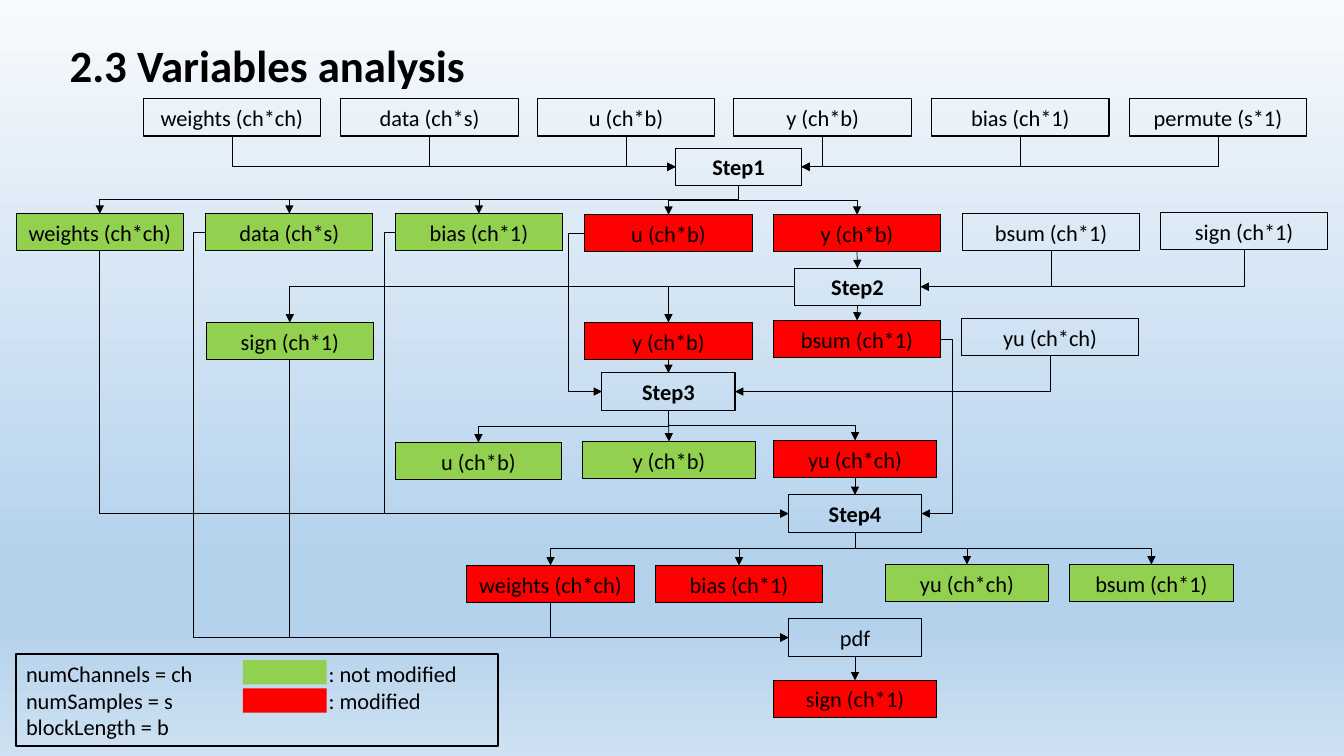
"""Build the variables analysis slide: a data-flow chart over four steps with a legend."""
from copy import deepcopy
from itertools import product

from lxml.etree import SubElement
from pptx import Presentation
from pptx.dml.color import RGBColor
from pptx.enum.shapes import MSO_CONNECTOR, MSO_SHAPE
from pptx.enum.text import MSO_ANCHOR, MSO_AUTO_SIZE, PP_ALIGN
from pptx.oxml.ns import qn
from pptx.util import Pt

PX = 9144
BLACK = RGBColor(0x00, 0x00, 0x00)
GREEN = RGBColor(0x92, 0xD0, 0x50)
RED = RGBColor(0xFF, 0x00, 0x00)
SKY = [
    (0, RGBColor(0xF7, 0xFA, 0xFD)),
    (0.74, RGBColor(0xB5, 0xD2, 0xEC)),
    (0.83, RGBColor(0xB5, 0xD2, 0xEC)),
    (1, RGBColor(0xCE, 0xE1, 0xF2)),
]
TOP, LEFT, BOTTOM, RIGHT = range(4)
DIMENSIONS = {
    "weights": "ch*ch", "data": "ch*s", "u": "ch*b", "y": "ch*b", "bias": "ch*1",
    "permute": "s*1", "bsum": "ch*1", "sign": "ch*1", "yu": "ch*ch",
}

deck = Presentation()
deck.slide_width, deck.slide_height = 1333 * PX, 750 * PX
slide = deck.slides.add_slide(deck.slide_layouts[5])

sky = slide.background.fill
sky.gradient()
sky.gradient_angle = 270
stops = slide._element.find(".//" + qn("a:gsLst"))
while len(stops) < len(SKY):
    stops.append(deepcopy(stops[0]))
for stop, (position, color) in zip(sky.gradient_stops, SKY):
    stop.position = position
    stop.color.rgb = color


def format_font(paragraph, size, bold):
    for key, value in {"name": "Calibri", "size": Pt(size), "bold": bold}.items():
        setattr(paragraph.font, key, value)
    paragraph.font.color.rgb = BLACK


def add_box(x, y, width, height, fill=None, line=0.75, lines=(), bold=False, align=PP_ALIGN.CENTER):
    box = slide.shapes.add_shape(MSO_SHAPE.RECTANGLE, x * PX, y * PX, width * PX, height * PX)
    box.shadow.inherit = False
    if fill is None:
        box.fill.background()
    else:
        box.fill.solid()
        box.fill.fore_color.rgb = fill
    if line:
        box.line.color.rgb = BLACK
        box.line.width = Pt(line)
    else:
        box.line.fill.background()
    if lines:
        frame = box.text_frame
        frame.text = "\n".join(lines)
        frame.word_wrap = True
        frame.auto_size = MSO_AUTO_SIZE.SHAPE_TO_FIT_TEXT
        for paragraph in frame.paragraphs:
            paragraph.alignment = align
            format_font(paragraph, 16, bold)
    return box


heading = slide.shapes.title
for key, value in {"left": 59, "top": 36, "width": 827, "height": 63}.items():
    setattr(heading, key, value * PX)
heading.text_frame.text = "2.3 Variables analysis"
heading.text_frame.vertical_anchor = MSO_ANCHOR.MIDDLE
heading_line = heading.text_frame.paragraphs[0]
heading_line.alignment = PP_ALIGN.LEFT
heading_line.line_spacing = 0.9
format_font(heading_line, 32, True)

variable_rows = [
    ("in1", 98, 176, None,
     {"weights": 142, "data": 338, "u": 533, "y": 728, "bias": 924, "permute": 1120}),
    ("in2", 212, 175, None, {"bsum": 955}),
    ("in2", 211, 166, None, {"sign": 1151}),
    ("in3", 316, 175, None, {"yu": 954}),
    ("out1", 212, 166, GREEN, {"weights": 16, "data": 204, "bias": 392}),
    ("out1", 213, 166, RED, {"u": 580, "y": 767}),
    ("out2", 320, 165, GREEN, {"sign": 205}),
    ("out2", 320, 166, RED, {"y": 580}),
    ("out2", 318, 166, RED, {"bsum": 767}),
    ("out3", 439, 165, GREEN, {"u": 392}),
    ("out3", 438, 171, GREEN, {"y": 578}),
    ("out3", 437, 162, RED, {"yu": 767}),
    ("out4", 561, 166, RED, {"weights": 463, "bias": 650}),
    ("out4", 560, 162, GREEN, {"yu": 878, "bsum": 1061}),
    ("final", 675, 162, RED, {"sign": 767}),
]
steps = [
    ("Step1", 670, 147, 125), ("Step2", 788, 266, 125), ("Step3", 597, 370, 132),
    ("Step4", 782, 491, 132), ("pdf", 782, 614, 132),
]
nodes = {}
for stage, y, width, fill, columns in variable_rows:
    for variable, x in columns.items():
        label = f"{variable} ({DIMENSIONS[variable]})"
        nodes[f"{stage} {variable}"] = add_box(x, y, width, 37, fill, lines=[label])
for step, x, y, width in steps:
    nodes[step] = add_box(x, y, width, 37, lines=[step], bold=step != "pdf")

legend = add_box(
    16, 649, 478, 91, line=1.5, align=PP_ALIGN.LEFT,
    lines=["numChannels = ch\t: not modified", "numSamples = s\t: modified", "blockLength = b"])
for paragraph in legend.text_frame.paragraphs:
    tabs = SubElement(paragraph._p.get_or_add_pPr(), qn("a:tabLst"))
    SubElement(tabs, qn("a:tab"), pos=str(300 * PX), algn="l")

flows = [
    (["in1 weights", "in1 data", "in1 u"], BOTTOM, ["Step1"], LEFT, 0),
    (["in1 y", "in1 bias", "in1 permute"], BOTTOM, ["Step1"], RIGHT, 0),
    (["Step1"], BOTTOM, ["out1 weights", "out1 data", "out1 bias", "out1 u", "out1 y"], TOP, 0),
    (["out1 y"], BOTTOM, ["Step2"], TOP, 0),
    (["in2 bsum", "in2 sign"], BOTTOM, ["Step2"], RIGHT, 0),
    (["Step2"], LEFT, ["out2 sign", "out2 y"], TOP, 0),
    (["Step2"], BOTTOM, ["out2 bsum"], TOP, 0),
    (["out2 y"], BOTTOM, ["Step3"], TOP, 0),
    (["out1 u"], LEFT, ["Step3"], LEFT, 16),
    (["in3 yu"], BOTTOM, ["Step3"], RIGHT, 0),
    (["Step3"], BOTTOM, ["out3 y", "out3 u", "out3 yu"], TOP, 0),
    (["out3 yu"], BOTTOM, ["Step4"], TOP, 0),
    (["out1 weights"], BOTTOM, ["Step4"], LEFT, 0),
    (["out1 bias"], LEFT, ["Step4"], LEFT, 11),
    (["out2 bsum"], RIGHT, ["Step4"], RIGHT, 12),
    (["Step4"], BOTTOM, ["out4 weights", "out4 bias", "out4 yu", "out4 bsum"], TOP, 0),
    (["out4 weights", "out2 sign"], BOTTOM, ["pdf"], LEFT, 0),
    (["out1 data"], LEFT, ["pdf"], LEFT, 12),
    (["pdf"], BOTTOM, ["final sign"], TOP, 0),
]
for sources, exit_side, targets, entry_side, detour in flows:
    for source, target in product(sources, targets):
        arrow = slide.shapes.add_connector(MSO_CONNECTOR.ELBOW, 0, 0, 0, 0)
        arrow.begin_connect(nodes[source], exit_side)
        arrow.end_connect(nodes[target], entry_side)
        run, drop = arrow.end_x - arrow.begin_x, arrow.end_y - arrow.begin_y
        properties = arrow._element.spPr
        geometry = properties.find(qn("a:prstGeom"))
        vertical_exit = exit_side == BOTTOM
        vertical_entry = entry_side == TOP
        if vertical_exit and vertical_entry and abs(run) < 3 * PX:
            geometry.set("prst", "straightConnector1")
        else:
            if vertical_exit != vertical_entry:
                geometry.set("prst", "bentConnector2")
            if vertical_exit:
                middle_x = (arrow.begin_x + arrow.end_x) // 2
                middle_y = (arrow.begin_y + arrow.end_y) // 2
                turned = {
                    "left": middle_x - drop // 2, "top": middle_y - abs(run) // 2,
                    "width": drop, "height": abs(run), "rotation": 270 if run > 0 else 90,
                }
                for key, value in turned.items():
                    setattr(arrow, key, value)
                properties.xfrm.set("flipH", "1" if run > 0 else "0")
            if detour:
                bend = -100000 * detour * PX // abs(run)
                guides = geometry.find(qn("a:avLst"))
                if guides is None:
                    guides = SubElement(geometry, qn("a:avLst"))
                SubElement(guides, qn("a:gd"), name="adj1", fmla=f"val {bend}")
        arrow.line.color.rgb = BLACK
        arrow.line.width = Pt(0.5)
        SubElement(arrow.line._get_or_add_ln(), qn("a:tailEnd"), type="triangle")
        SubElement(properties, qn("a:effectLst"))

for y, fill in [(655, GREEN), (683, RED)]:
    add_box(241, y, 83, 24, fill, line=0)

deck.save("out.pptx")
